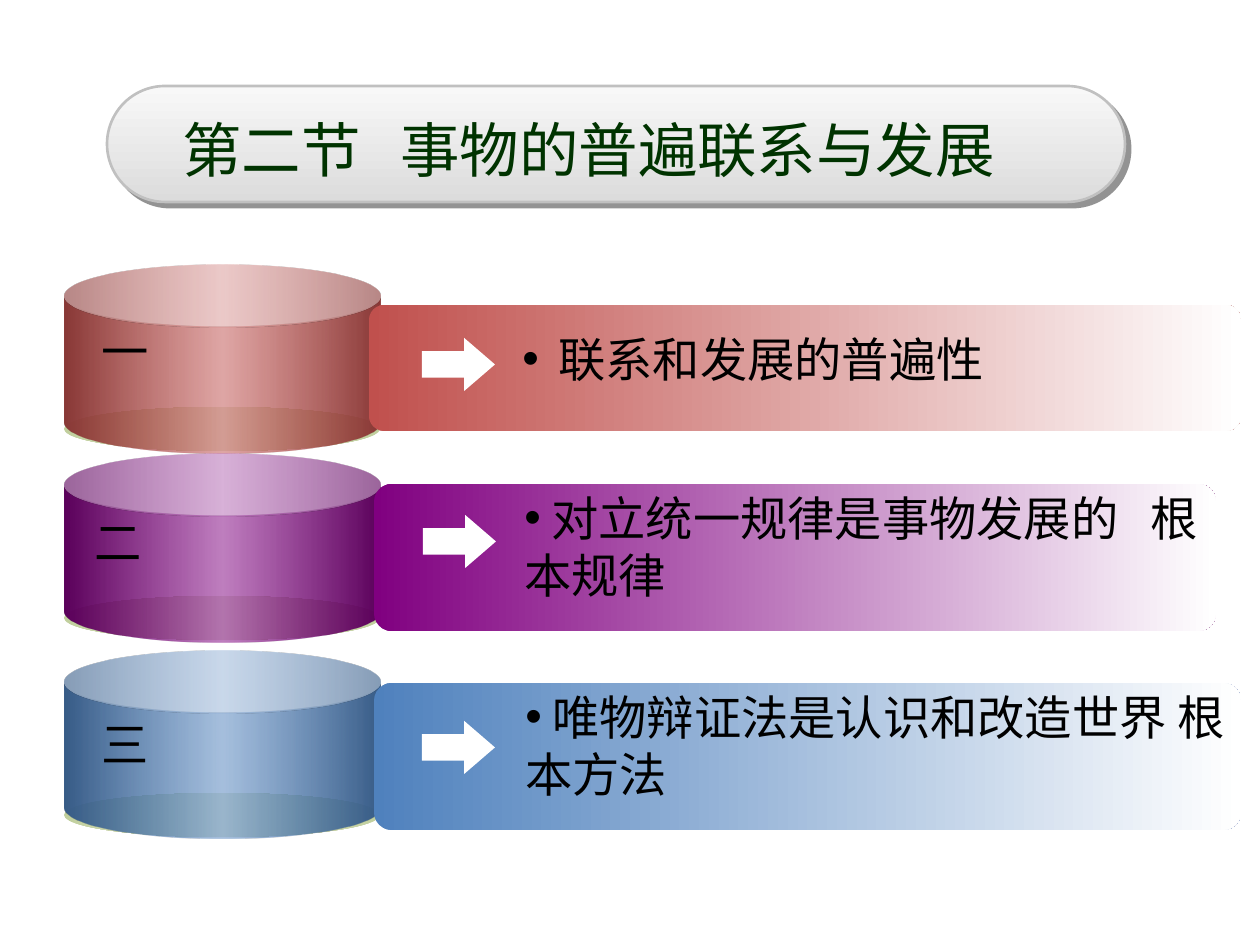
from pptx import Presentation
from pptx import util as u
from pptx.dml import color
from pptx.enum import shapes
from pptx.oxml import parse_xml
from pptx.oxml.ns import nsdecls, qn

PX = 914400 // 126  # EMU in one px
SHAPE = shapes.MSO_SHAPE

# Per row: accent colour, can top, bar box, label (text, left, top),
# arrow (left, top), body (text, left, top, width, hanging indent, tab stop)
ROWS = [
    ("C0504D", 265, (369, 305, 872, 126), ("一", 102, 316), (422, 338),
     ("联系和发展的普遍性", 510, 324, 645, 36, None)),
    ("800080", 454, (374, 484, 842, 147), ("二", 95, 507), (423, 515),
     (" 对立统一规律是事物发展的\t根本规律", 512, 483, 704, 0, 626)),
    ("4F81BD", 651, (374, 683, 867, 147), ("三", 102, 709), (422, 721),
     (" 唯物辩证法是认识和改造世界 根本方法", 513, 682, 728, 0, None)),
]


def rgb(value):
    return color.RGBColor.from_string(value)


def gradient_fill(shape, stops, angle=0):
    """Each stop is position, colour, then optional (modifier, percent) pairs."""
    stop_xml = ""
    for position, value, *modifiers in stops:
        inner = "".join(f'<a:{name} val="{round(percent * 1000)}"/>'
                        for name, percent in modifiers)
        stop_xml += (f'<a:gs pos="{position * 1000}">'
                     f'<a:srgbClr val="{value}">{inner}</a:srgbClr></a:gs>')
    shape.fill.background()
    properties = shape._element.spPr
    properties.replace(properties.find(qn("a:noFill")), parse_xml(
        f'<a:gradFill {nsdecls("a")} rotWithShape="1"><a:gsLst>{stop_xml}</a:gsLst>'
        f'<a:lin ang="{angle * 60000}" scaled="1"/></a:gradFill>'))


def add_shape(slide, kind, box, adjustments=()):
    shape = slide.shapes.add_shape(kind, *(PX * length for length in box))
    for index, value in enumerate(adjustments):
        shape.adjustments[index] = value
    shape.shadow.inherit = False
    shape.line.fill.background()
    return shape


def add_text(slide, text, box, size, value, font="Arial",
             bullet=False, hanging=0, tab=None):
    frame = slide.shapes.add_textbox(*(PX * length for length in box)).text_frame
    frame.word_wrap = True
    paragraph = frame.paragraphs[0]
    paragraph.text = text
    properties = paragraph._p.get_or_add_pPr()
    if bullet:
        properties.set("marL", str(hanging * PX))
        properties.set("indent", str(-hanging * PX))
        properties.append(parse_xml(f'<a:buFont {nsdecls("a")} typeface="Arial"/>'))
        properties.append(parse_xml(f'<a:buChar {nsdecls("a")} char="•"/>'))
    if tab:
        properties.append(parse_xml(
            f'<a:tabLst {nsdecls("a")}><a:tab pos="{tab * PX}" algn="l"/></a:tabLst>'))
    paragraph.font.name = font
    paragraph.font.size = u.Pt(size)
    paragraph.font.color.rgb = rgb(value)


def add_can(slide, accent, top):
    base = add_shape(slide, SHAPE.OVAL, (64, top + 142, 316, 44))
    gradient_fill(base, [(0, "C1CF9D"), (50, "E7ECDC"), (100, "C1CF9D")])
    can = add_shape(slide, SHAPE.CAN, (65, top, 316, 188), [0.33])
    dark = (accent, ("shade", 46.28))
    gradient_fill(can, [(0, *dark), (50, accent, ("alpha", 50)), (100, *dark)])


def add_row(slide, accent, can_top, bar_box, label, arrow_at, body):
    add_can(slide, accent, can_top)
    bar = add_shape(slide, SHAPE.ROUNDED_RECTANGLE, bar_box, [0.12])
    gradient_fill(bar, [(0, accent), (100, "FFFFFF")])

    text, left, top = label
    add_text(slide, text, (left - 13, top, 267, 69), 27, "000000")
    arrow = add_shape(slide, SHAPE.RIGHT_ARROW, (*arrow_at, 73, 53), [0.5, 0.58])
    arrow.fill.solid()
    arrow.fill.fore_color.rgb = rgb("FFFFFF")

    text, left, top, width, hanging, tab = body
    add_text(slide, text, (left, top, width, 69 if hanging else 126), 27, "000000",
             bullet=True, hanging=hanging, tab=tab)


def add_title(slide):
    pill = add_shape(slide, SHAPE.ROUNDED_RECTANGLE, (107, 86, 1018, 116), [0.5])
    gradient_fill(pill, [(0, "F8F8F8"), (100, "F8F8F8", ("shade", 76.47))], 90)
    pill.line.color.rgb = rgb("C0C0C0")
    pill.line.width = u.Pt(1.5)
    pill._element.spPr.find(qn("a:effectLst")).append(parse_xml(
        f'<a:outerShdw {nsdecls("a")} dist="{u.Pt(4.2)}" dir="2700000" algn="ctr" '
        'rotWithShape="0"><a:srgbClr val="292929"><a:alpha val="50000"/></a:srgbClr>'
        '</a:outerShdw>'))
    add_text(slide, "第二节\t事物的普遍联系与发展", (170, 107, 921, 84), 34, "003300",
             font="Noto Sans CJK JP", tab=218)


def main():
    presentation = Presentation()
    presentation.slide_width = 1260 * PX
    presentation.slide_height = 945 * PX
    slide = presentation.slides.add_slide(presentation.slide_layouts[6])
    for row in ROWS:
        add_row(slide, *row)
    add_title(slide)
    presentation.save("out.pptx")


if __name__ == "__main__":
    main()
